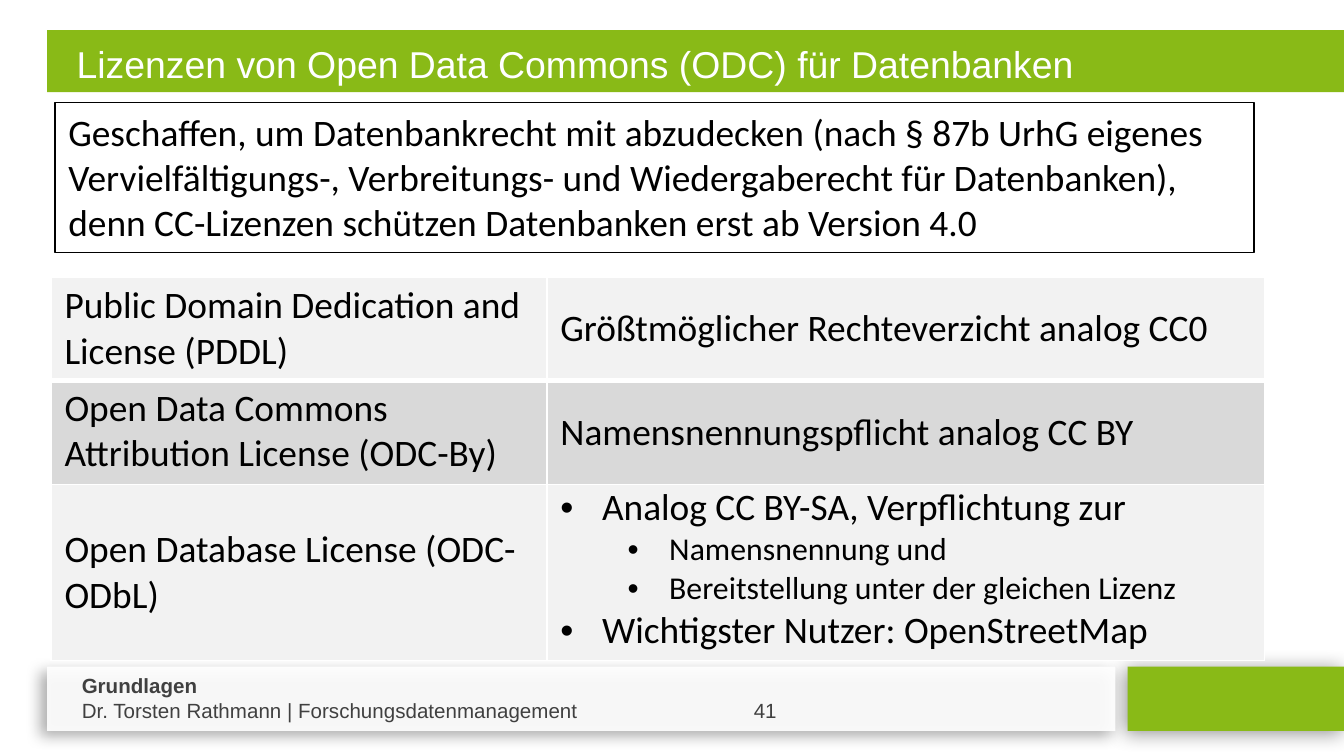
from dataclasses import dataclass

import pptx
import pptx.dml.color
import pptx.enum.shapes
import pptx.enum.text
import pptx.oxml
import pptx.oxml.ns
import pptx.util
from lxml import etree

WIDTH = 10
HEIGHT = WIDTH * 9 / 16
A = pptx.oxml.ns.nsdecls("a")
PP = pptx.enum.text.PP_ALIGN
ANCHOR = pptx.enum.text.MSO_ANCHOR


@dataclass(frozen=True)
class Theme:
    green: str = "89BA17"
    white: str = "FFFFFF"
    black: str = "000000"
    grey_text: str = "404040"
    light: str = "F2F2F2"
    dark: str = "D9D9D9"
    head_font: str = "Arial"
    body_font: str = "Calibri"
    body: float = 20
    sub: float = 17
    foot: float = 11


@dataclass(frozen=True)
class Box:
    """Percent shares of the slide's width and height."""
    x: float
    y: float
    w: float
    h: float

    def emu(self) -> tuple:
        return across(self.x), down(self.y), across(self.w), down(self.h)


@dataclass(frozen=True)
class Shadow:
    alpha: int
    blur: float
    dist: float
    angle: int


@dataclass(frozen=True)
class Panel:
    box: Box
    fill: str
    alpha: int = 100
    shadow: Shadow | None = None


@dataclass(frozen=True)
class Item:
    text: str
    level: int | None = None


@dataclass(frozen=True)
class License:
    name: str
    items: tuple
    fill: str
    height: float
    name_anchor: ANCHOR = ANCHOR.TOP
    pad: tuple = (0.04, 0.04)


T = Theme()
PANELS = (
    Panel(Box(83.9, 88.2, 16.1, 8.5), T.green, shadow=Shadow(42, 10.8, 2, 142)),
    Panel(Box(3.5, 88.2, 79.5, 8.5), T.white, 91, Shadow(34, 7.5, 4, 145)),
    Panel(Box(3.5, 4, 96.9, 8.2), T.green),
)
LICENSES = (
    License("Public Domain Dedication and License (PDDL)",
            (Item("Größtmöglicher Rechteverzicht analog CC0"),), T.light, 13.6),
    License("Open Data Commons Attribution License (ODC-By)",
            (Item("Namensnennungspflicht analog CC BY"),), T.dark, 13.8),
    License("Open Database License (ODC-ODbL)",
            (Item("Analog CC BY-SA, Verpflichtung zur", 0),
             Item("Namensnennung und", 1),
             Item("Bereitstellung unter der gleichen Lizenz", 1),
             Item("Wichtigster Nutzer: OpenStreetMap", 0)),
            T.light, 23.2, ANCHOR.MIDDLE, (0, 0.05)),
)


def across(share: float) -> int:
    return pptx.util.Inches(WIDTH * share / 100)


def down(share: float) -> int:
    return pptx.util.Inches(HEIGHT * share / 100)


def rgb(color: str) -> pptx.dml.color.RGBColor:
    return pptx.dml.color.RGBColor.from_string(color)


def add_run(p, text: str, size: float, font: str, color: str, bold: bool = False) -> None:
    r = p.add_run()
    r.text = text
    r.font.size = pptx.util.Pt(size)
    r.font.name = font
    r.font.color.rgb = rgb(color)
    r.font.bold = bold


def add_panel(s, panel: Panel) -> None:
    sp = s.shapes.add_shape(pptx.enum.shapes.MSO_SHAPE.RECTANGLE, *panel.box.emu())
    sp.shadow.inherit = False
    sp.fill.solid()
    sp.fill.fore_color.rgb = rgb(panel.fill)
    sp.line.fill.background()
    pr = sp.element.spPr
    if panel.alpha < 100:
        color = pr.find(".//" + pptx.oxml.ns.qn("a:srgbClr"))
        etree.SubElement(color, pptx.oxml.ns.qn("a:alpha"), val=str(panel.alpha * 1000))
    if panel.shadow:
        sh = panel.shadow
        pr.find(pptx.oxml.ns.qn("a:effectLst")).append(pptx.oxml.parse_xml(
            f'<a:outerShdw {A} blurRad="{pptx.util.Pt(sh.blur)}" dist="{pptx.util.Pt(sh.dist)}" '
            f'dir="{sh.angle * 60000}" algn="tl" rotWithShape="0"><a:srgbClr val="{T.black}">'
            f'<a:alpha val="{sh.alpha * 1000}"/></a:srgbClr></a:outerShdw>'))


def add_footer(s) -> None:
    tf = s.shapes.add_textbox(*Box(5.1, 88.2, 59.8, 8.4).emu()).text_frame
    tf.word_wrap = True
    add_run(tf.paragraphs[0], "Grundlagen", T.foot, T.head_font, T.grey_text, True)
    p = tf.add_paragraph()
    p._p.get_or_add_pPr().append(pptx.oxml.parse_xml(
        f'<a:tabLst {A}><a:tab pos="{across(50)}" algn="l"/></a:tabLst>'))
    add_run(p, "Dr. Torsten Rathmann | Forschungsdatenmanagement\t41",
            T.foot, T.head_font, T.grey_text)


def format_title(s) -> None:
    title = s.shapes.title
    s.shapes.element.append(title.element)
    title.left, title.top, title.width, title.height = Box(3.5, 4, 96.9, 6.2).emu()
    tf = title.text_frame
    tf.auto_size = pptx.enum.text.MSO_AUTO_SIZE.NONE
    tf.vertical_anchor = ANCHOR.TOP
    tf.margin_top = pptx.util.Inches(0.08)
    tf.margin_bottom = 0
    p = tf.paragraphs[0]
    p.alignment = PP.LEFT
    p._p.get_or_add_pPr().set("marL", str(pptx.util.Inches(0.12)))
    add_run(p, "Lizenzen von Open Data Commons (ODC) für Datenbanken",
            T.body, T.head_font, T.white)


def add_intro(s) -> None:
    sp = s.shapes.add_shape(pptx.enum.shapes.MSO_SHAPE.RECTANGLE, *Box(4.1, 13.6, 89.2, 19.8).emu())
    sp.shadow.inherit = False
    sp.fill.background()
    sp.line.color.rgb = rgb(T.black)
    sp.line.width = pptx.util.Pt(0.75)
    tf = sp.text_frame
    tf.word_wrap = True
    tf.vertical_anchor = ANCHOR.TOP
    p = tf.paragraphs[0]
    p.alignment = PP.LEFT
    add_run(p, "Geschaffen, um Datenbankrecht mit abzudecken (nach § 87b UrhG eigenes "
               "Vervielfältigungs-, Verbreitungs- und Wiedergaberecht für Datenbanken), "
               "denn CC-Lizenzen schützen Datenbanken erst ab Version 4.0",
            T.body, T.body_font, T.black)


def fill_cell(cell, items: tuple, fill: str, anchor: ANCHOR, pad: tuple, top: float, bottom: float) -> None:
    pr = cell._tc.get_or_add_tcPr()
    for side, width in (("L", 1), ("R", 1), ("T", top), ("B", bottom)):
        pr.append(pptx.oxml.parse_xml(
            f'<a:ln{side} {A} w="{pptx.util.Pt(width)}"><a:solidFill>'
            f'<a:srgbClr val="{T.white}"/></a:solidFill></a:ln{side}>'))
    cell.fill.solid()
    cell.fill.fore_color.rgb = rgb(fill)
    cell.vertical_anchor = anchor
    cell.margin_top, cell.margin_bottom = map(pptx.util.Inches, pad)
    tf = cell.text_frame
    for i, item in enumerate(items):
        p = tf.add_paragraph() if i else tf.paragraphs[0]
        if item.level is not None:
            p.level = item.level
            ppr = p._p.get_or_add_pPr()
            ppr.set("marL", str(pptx.util.Inches(0.31 + 0.5 * item.level)))
            ppr.set("indent", str(pptx.util.Inches(-0.31)))
            ppr.append(pptx.oxml.parse_xml(f'<a:buFont {A} typeface="{T.head_font}"/>'))
            ppr.append(pptx.oxml.parse_xml(f'<a:buChar {A} char="•"/>'))
        add_run(p, item.text, T.sub if item.level else T.body, T.body_font, T.black)


def add_licenses(s) -> None:
    height = sum(row.height for row in LICENSES)
    table = s.shapes.add_table(len(LICENSES), 2, *Box(3.8, 36.7, 90.3, height).emu()).table
    table.first_row = table.horz_banding = False
    table.columns[0].width, table.columns[1].width = across(36.9), across(53.4)
    for i, row in enumerate(LICENSES):
        table.rows[i].height = down(row.height)
        edges = (3 if i == 1 else 1, 3 if i == 0 else 1)
        name_pad = (0.16, 0.16) if row.name_anchor == ANCHOR.MIDDLE else row.pad
        fill_cell(table.cell(i, 0), (Item(row.name),), row.fill, row.name_anchor, name_pad, *edges)
        fill_cell(table.cell(i, 1), row.items, row.fill, ANCHOR.MIDDLE, row.pad, *edges)


def main() -> None:
    prs = pptx.Presentation()
    prs.slide_width, prs.slide_height = across(100), down(100)
    s = prs.slides.add_slide(prs.slide_layouts[5])
    for panel in PANELS:
        add_panel(s, panel)
    add_footer(s)
    format_title(s)
    add_licenses(s)
    add_intro(s)
    prs.save("out.pptx")


if __name__ == "__main__":
    main()
